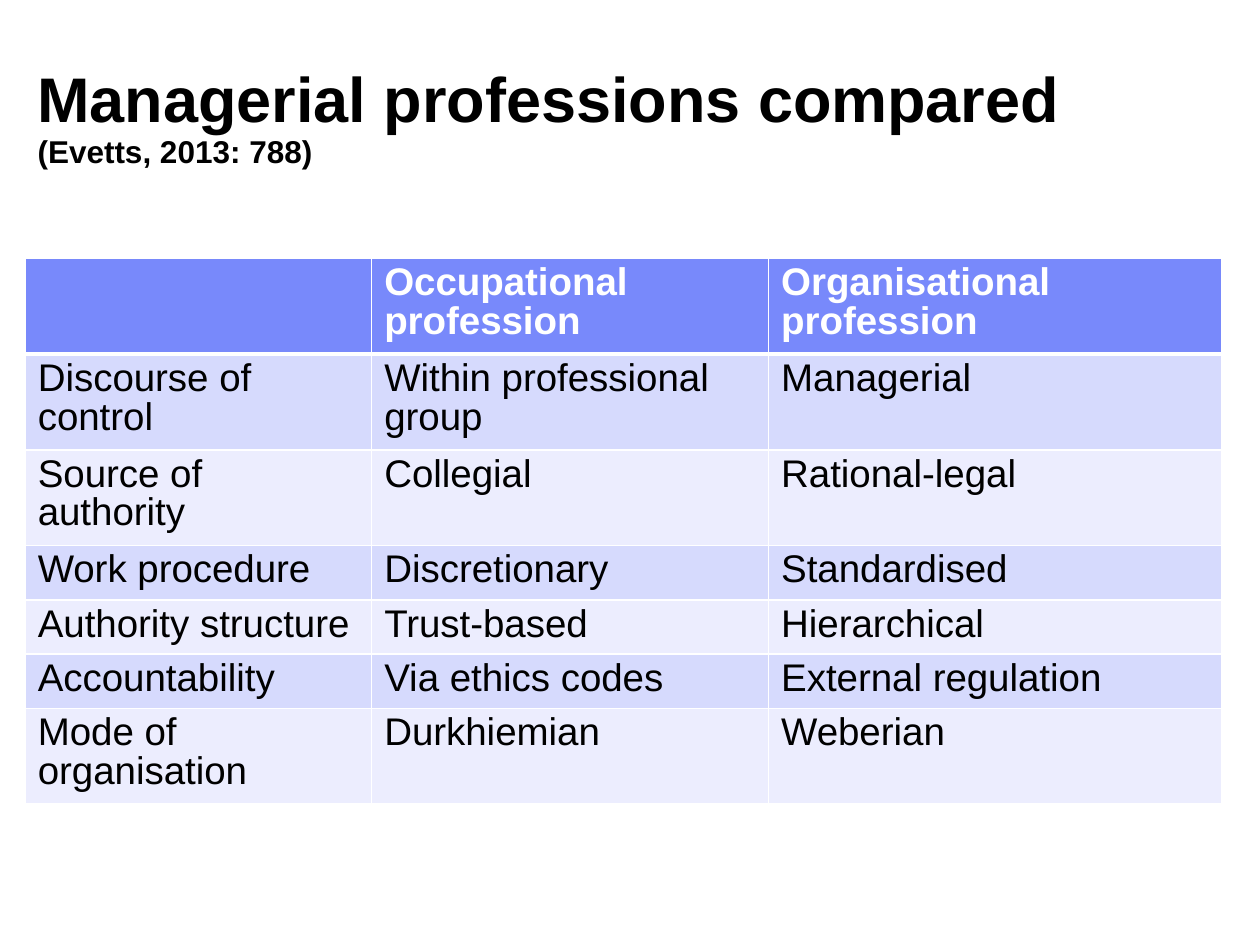
"""Build a slide with a table that compares managerial professions."""
from lxml import etree
from pptx import Presentation
from pptx import util as u
from pptx.dml.color import RGBColor
from pptx.enum import text
from pptx.oxml import ns

HUES = {"head": "7889FB", "odd": "D6DAFD", "even": "ECEDFE",
        "white": "FFFFFF", "black": "000000"}
ROWS = [
    ("", "Occupational profession", "Organisational profession"),
    ("Discourse of control", "Within professional group", "Managerial"),
    ("Source of authority", "Collegial", "Rational-legal"),
    ("Work procedure", "Discretionary", "Standardised"),
    ("Authority structure", "Trust-based", "Hierarchical"),
    ("Accountability", "Via ethics codes", "External regulation"),
    ("Mode of organisation", "Durkhiemian", "Weberian"),
]
WIDTHS = [2.75, 3.15, 3.6]
HIGH = 0.41


def add_run(para, words, size, hue, bold):
    para.line_spacing = 0.9
    run = para.add_run()
    run.text = words
    run.font.name = "Arial"
    run.font.size = u.Pt(size)
    run.font.bold = bold
    run.font.color.rgb = RGBColor.from_string(HUES[hue])


def add_edge(cell, side, width):
    props = cell._tc.get_or_add_tcPr()
    line = etree.SubElement(props, ns.qn(f"a:ln{side}"), w=str(u.Pt(width)))
    fill = etree.SubElement(line, ns.qn("a:solidFill"))
    etree.SubElement(fill, ns.qn("a:srgbClr"), val=HUES["white"])


deck = Presentation()
deck.slide_width, deck.slide_height = u.Inches(10), u.Inches(7.5)
slide = deck.slides.add_slide(deck.slide_layouts[6])

title = slide.shapes.add_textbox(
    u.Inches(0.2), u.Inches(0.44), u.Inches(9.13), u.Inches(0.53))
frame = title.text_frame
frame.word_wrap = True
frame.margin_top = u.Inches(0.1)
frame.vertical_anchor = text.MSO_ANCHOR.TOP
para = frame.paragraphs[0]
add_run(para, "Managerial professions compared", 36, "black", True)
para.add_line_break()
add_run(para, "(Evetts, 2013: 788)", 18, "black", True)

table = slide.shapes.add_table(
    len(ROWS), len(WIDTHS), u.Inches(0.2), u.Inches(2.05),
    u.Inches(sum(WIDTHS)), u.Inches(HIGH * len(ROWS))).table
for col, width in zip(table.columns, WIDTHS):
    col.width = u.Inches(width)

for r, words in enumerate(ROWS):
    table.rows[r].height = u.Inches(HIGH)
    band = "head" if r == 0 else "odd" if r % 2 else "even"
    edges = {"L": 1, "R": 1, "T": 3 if r == 1 else 1, "B": 3 if r == 0 else 1}
    for c, word in enumerate(words):
        cell = table.cell(r, c)
        for side, width in edges.items():
            add_edge(cell, side, width)
        cell.fill.solid()
        cell.fill.fore_color.rgb = RGBColor.from_string(HUES[band])
        if word:
            add_run(cell.text_frame.paragraphs[0], word, 22,
                    "black" if r else "white", r == 0)

deck.save("out.pptx")
